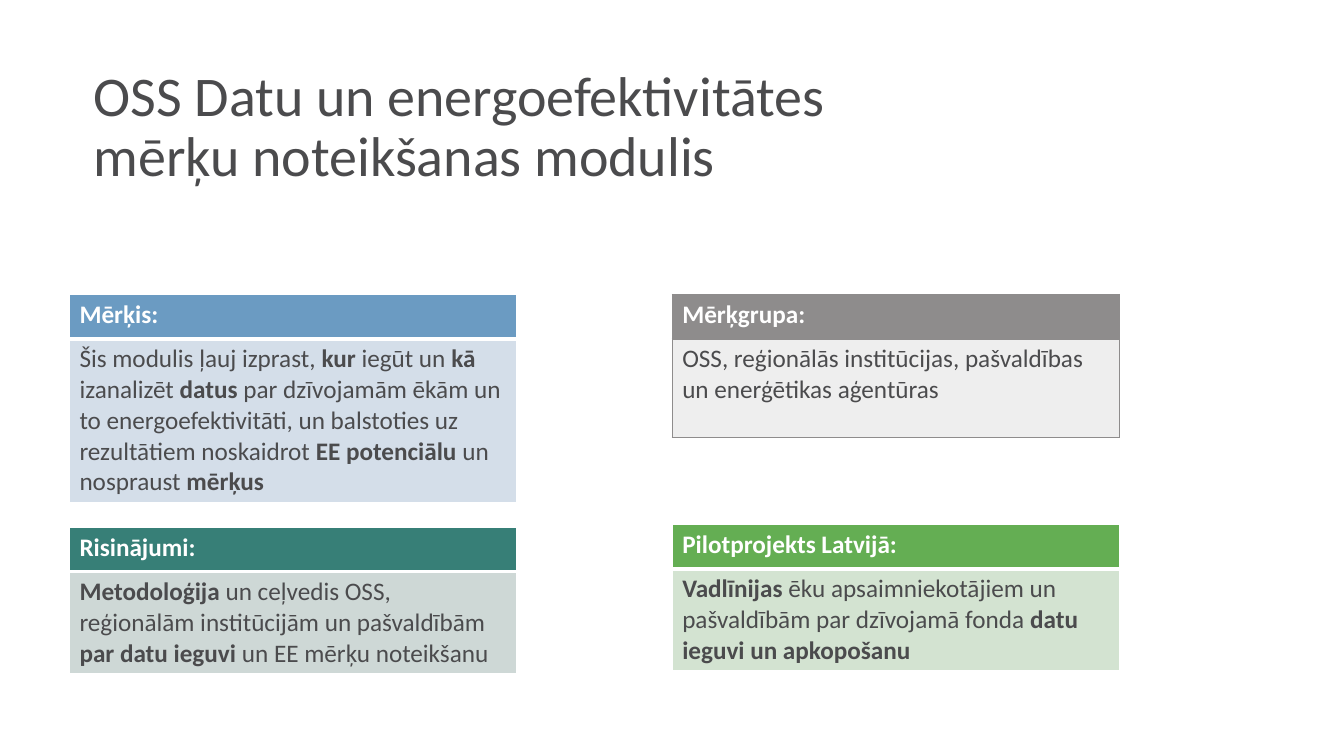
from dataclasses import dataclass

from lxml import etree
from pptx import Presentation
from pptx.dml.color import RGBColor
from pptx.enum import text
from pptx.oxml import ns
from pptx.util import Cm, Pt


@dataclass(frozen=True)
class Theme:
    font: str = "Calibri"
    title_size: int = 40
    body_size: int = 18
    ink: str = "4B4B4D"
    white: str = "FFFFFF"
    blue: str = "6B9BC2"
    pale_blue: str = "D4DEE9"
    gray: str = "8E8C8C"
    pale_gray: str = "EEEEEE"
    teal: str = "377F77"
    pale_teal: str = "CED8D6"
    green: str = "64AE53"
    pale_green: str = "D3E3D1"


THEME = Theme()
LEFT_COLUMN, RIGHT_COLUMN = 1.75, 16.94
CARD_WIDTH, HEADER_HEIGHT = 11.28, 1.12


@dataclass(frozen=True)
class Card:
    """A header row over a body row; asterisks enclose bold words. Lengths in cm."""
    heading: str
    body: str
    left: float
    top: float
    body_height: float
    header_fill: str
    body_fill: str
    border: str = THEME.white
    divider: float = 3


CARDS = [
    Card("Mērķis:",
         "Šis modulis ļauj izprast, *kur* iegūt un *kā *izanalizēt *datus* par dzīvojamām "
         "ēkām un to energoefektivitāti, un balstoties uz rezultātiem noskaidrot "
         "*EE potenciālu *un nospraust *mērķus*",
         LEFT_COLUMN, 7.42, 4.07, THEME.blue, THEME.pale_blue),
    Card("Mērķgrupa:",
         "OSS, reģionālās institūcijas, pašvaldības un enerģētikas aģentūras",
         RIGHT_COLUMN, 7.42, 2.49, THEME.gray, THEME.pale_gray, THEME.gray, 1),
    Card("Risinājumi:",
         "*Metodoloģija *un ceļvedis OSS, reģionālām institūcijām un pašvaldībām "
         "*par datu ieguvi *un EE mērķu noteikšanu",
         LEFT_COLUMN, 13.28, 2.54, THEME.teal, THEME.pale_teal),
    Card("Pilotprojekts Latvijā:",
         "*Vadlīnijas* ēku apsaimniekotājiem un pašvaldībām par dzīvojamā fonda "
         "*datu ieguvi un apkopošanu*",
         RIGHT_COLUMN, 13.21, 2.54, THEME.green, THEME.pale_green),
]


def write_text(frame, content: str, *, size: int = THEME.body_size,
               color: str = THEME.ink, line_spacing: float = 1.0) -> None:
    """Fill the first paragraph, setting words between asterisks in bold."""
    paragraph = frame.paragraphs[0]
    paragraph.alignment = text.PP_ALIGN.LEFT
    paragraph.line_spacing = line_spacing
    for index, part in enumerate(content.split("*")):
        if not part:
            continue
        run = paragraph.add_run()
        run.text = part
        run.font.name = THEME.font
        run.font.size = Pt(size)
        run.font.bold = index % 2 == 1
        run.font.color.rgb = RGBColor.from_string(color)


def set_borders(cell, color: str, **widths: float) -> None:
    """Add cell borders; widths are points for the sides L, R, T and B, in that order."""
    properties = cell._tc.get_or_add_tcPr()
    for side, width in widths.items():
        line = etree.SubElement(properties, ns.qn(f"a:ln{side}"), w=str(Pt(width)))
        fill = etree.SubElement(line, ns.qn("a:solidFill"))
        etree.SubElement(fill, ns.qn("a:srgbClr"), val=color)


def fill_cell(cell, color: str) -> None:
    cell.fill.solid()
    cell.fill.fore_color.rgb = RGBColor.from_string(color)


def add_card(slide, card: Card) -> None:
    table = slide.shapes.add_table(
        2, 1, Cm(card.left), Cm(card.top), Cm(CARD_WIDTH),
        Cm(HEADER_HEIGHT + card.body_height)).table
    table.horz_banding = False
    table.rows[0].height = Cm(HEADER_HEIGHT)
    table.rows[1].height = Cm(card.body_height)
    header, body = table.cell(0, 0), table.cell(1, 0)
    set_borders(header, card.border, L=1, R=1, T=1, B=card.divider)
    set_borders(body, card.border, L=1, R=1, T=card.divider, B=1)
    fill_cell(header, card.header_fill)
    fill_cell(body, card.body_fill)
    write_text(header.text_frame, f"*{card.heading}*", color=THEME.white)
    write_text(body.text_frame, card.body)


def add_title(slide, content: str) -> None:
    title = slide.shapes.title
    title.left, title.top, title.width, title.height = Cm(2.11), Cm(0.97), Cm(21.56), Cm(4.52)
    frame = title.text_frame
    frame.word_wrap = True
    frame.auto_size = text.MSO_AUTO_SIZE.NONE
    frame.vertical_anchor = text.MSO_ANCHOR.MIDDLE
    write_text(frame, content, size=THEME.title_size, line_spacing=0.9)


def main() -> None:
    presentation = Presentation()
    presentation.slide_width, presentation.slide_height = Cm(33.87), Cm(19.05)
    slide = presentation.slides.add_slide(presentation.slide_layouts.get_by_name("Title Only"))
    add_title(slide, "OSS Datu un energoefektivitātes mērķu noteikšanas modulis")
    for card in CARDS:
        add_card(slide, card)
    presentation.save("out.pptx")


if __name__ == "__main__":
    main()
